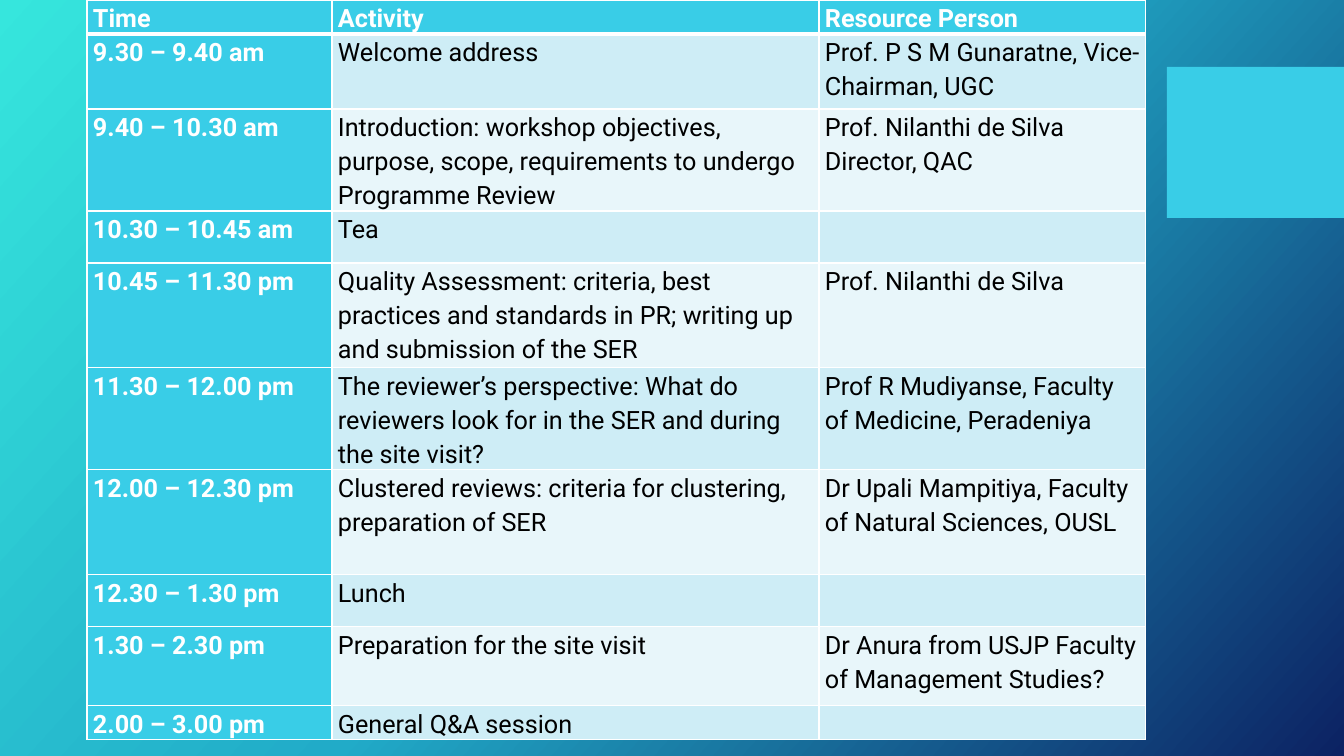
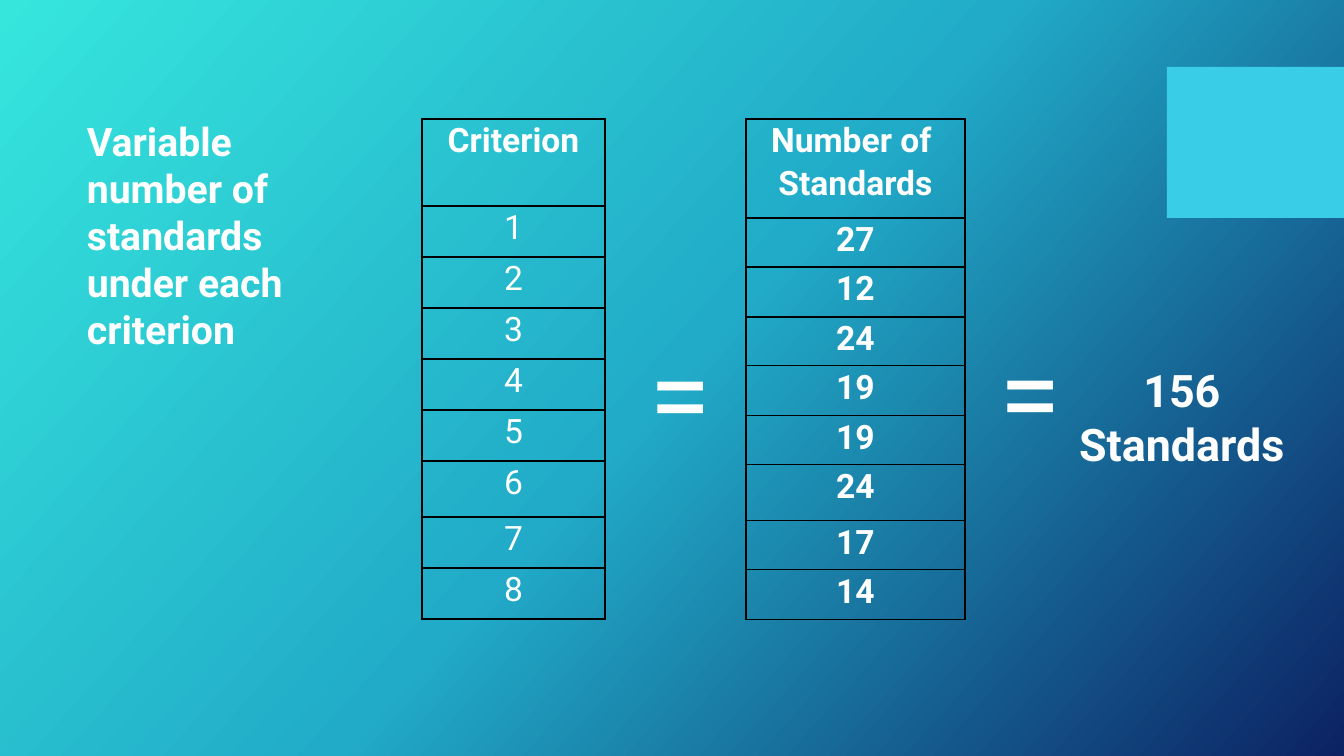
from copy import deepcopy
from dataclasses import dataclass

from lxml import etree
from pptx import Presentation
from pptx.dml.color import RGBColor
from pptx.enum import shapes, text
from pptx.oxml import ns
from pptx.slide import Slide
from pptx.table import _Cell
from pptx.text.text import TextFrame
from pptx.util import Emu, Pt

SLIDE_WIDTH, SLIDE_HEIGHT = 1344, 756
EMU_PER_PX = 12192000 / SLIDE_WIDTH


@dataclass(frozen=True)
class Theme:
    font: str = "Roboto"
    white: str = "FFFFFF"
    black: str = "000000"
    accent: str = "39CDE7"
    band_dark: str = "CEEDF6"
    band_light: str = "E8F6FA"
    gradient: tuple[tuple[float, str], ...] = ((0, "36E6DD"), (0.5, "21ABC8"), (1, "0C2263"))
    gradient_angle: int = 42
    schedule_size: int = 18
    count_size: int = 24
    title_size: int = 28
    total_size: int = 32
    equals_size: int = 80


THEME = Theme()


@dataclass(frozen=True)
class Box:
    left: int
    top: int
    width: int
    height: int

    def emu(self) -> tuple[Emu, ...]:
        return tuple(px(value) for value in (self.left, self.top, self.width, self.height))


@dataclass(frozen=True)
class TextStyle:
    size: int
    color: str = THEME.white
    bold: bool = True
    align: text.PP_ALIGN = text.PP_ALIGN.LEFT
    line_spacing: float = 1.0


@dataclass(frozen=True)
class Label:
    content: str
    box: Box
    style: TextStyle


@dataclass(frozen=True)
class CellStyle:
    text: TextStyle
    fill: str | None
    border: str
    margin: int
    top_width: int = 1
    bottom_width: int = 1


@dataclass(frozen=True)
class CountColumn:
    heading: str
    values: tuple[int, ...]
    left: int
    width: int
    row_heights: tuple[int, ...]
    bold_values: bool


SCHEDULE = (
    ("Time", "Activity", "Resource Person"),
    ("9.30 – 9.40 am", "Welcome address", "Prof. P S M Gunaratne, Vice-Chairman, UGC"),
    ("9.40 – 10.30 am",
     "Introduction: workshop objectives, purpose, scope, requirements to undergo Programme Review",
     "Prof. Nilanthi de Silva Director, QAC"),
    ("10.30 – 10.45 am", "Tea", ""),
    ("10.45 – 11.30 pm",
     "Quality Assessment: criteria, best practices and standards in PR; "
     "writing up and submission of the SER",
     "Prof. Nilanthi de Silva"),
    ("11.30 – 12.00 pm",
     "The reviewer’s perspective: What do reviewers look for in the SER and during the site visit?",
     "Prof R Mudiyanse, Faculty of Medicine, Peradeniya"),
    ("12.00 – 12.30 pm", "Clustered reviews: criteria for clustering, preparation of SER",
     "Dr Upali Mampitiya, Faculty of Natural Sciences, OUSL"),
    ("12.30 – 1.30 pm", "Lunch", ""),
    ("1.30 – 2.30 pm", "Preparation for the site visit",
     "Dr Anura from USJP Faculty of Management Studies?"),
    ("2.00 – 3.00 pm", "General Q&A session", ""),
)
SCHEDULE_COLUMNS = (245, 487, 327)
SCHEDULE_ROWS = (34, 75, 101, 52, 105, 102, 105, 52, 79, 34)

COUNT_COLUMNS = (
    CountColumn("Number of \nStandards", (27, 12, 24, 19, 19, 24, 17, 14), 746, 219,
                (99, 49, 50, 49, 50, 49, 56, 49, 50), True),
    CountColumn("Criterion", tuple(range(1, 9)), 422, 183,
                (87, 51, 51, 51, 51, 51, 56, 51, 51), False),
)

EQUALS_STYLE = TextStyle(THEME.equals_size, bold=False)
LABELS = (
    Label("Variable number of standards under each criterion", Box(77, 112, 286, 248),
          TextStyle(THEME.title_size)),
    Label("=", Box(640, 319, 91, 146), EQUALS_STYLE),
    Label("=", Box(990, 318, 91, 146), EQUALS_STYLE),
    Label("156\nStandards", Box(1064, 358, 236, 173),
          TextStyle(THEME.total_size, align=text.PP_ALIGN.CENTER)),
)


def px(value: int) -> Emu:
    return Emu(round(value * EMU_PER_PX))


def rgb(value: str) -> RGBColor:
    return RGBColor.from_string(value)


def write_text(frame: TextFrame, content: str, style: TextStyle) -> None:
    frame.text = content
    for paragraph in frame.paragraphs:
        paragraph.alignment = style.align
        paragraph.line_spacing = style.line_spacing
        paragraph.font.size = Pt(style.size)
        for run in paragraph.runs:
            run.font.name = THEME.font
            run.font.size = Pt(style.size)
            run.font.bold = style.bold
            run.font.color.rgb = rgb(style.color)


def draw_label(slide: Slide, label: Label) -> None:
    frame = slide.shapes.add_textbox(*label.box.emu()).text_frame
    frame.word_wrap = True
    write_text(frame, label.content, label.style)


def set_borders(cell: _Cell, style: CellStyle) -> None:
    properties = cell._tc.get_or_add_tcPr()
    widths = {"lnL": 1, "lnR": 1, "lnT": style.top_width, "lnB": style.bottom_width}
    for position, (side, width) in enumerate(widths.items()):
        line = etree.Element(ns.qn(f"a:{side}"), w=str(Pt(width)))
        solid = etree.SubElement(line, ns.qn("a:solidFill"))
        etree.SubElement(solid, ns.qn("a:srgbClr"), val=style.border)
        properties.insert(position, line)


def fill_cell(cell: _Cell, content: str, style: CellStyle) -> None:
    cell.margin_left = cell.margin_right = px(style.margin)
    cell.margin_top = cell.margin_bottom = 0
    if style.fill:
        cell.fill.solid()
        cell.fill.fore_color.rgb = rgb(style.fill)
    else:
        cell.fill.background()
    set_borders(cell, style)
    write_text(cell.text_frame, content, style.text)


def add_plain_table(slide: Slide, left: int, top: int, columns: tuple[int, ...],
                    rows: tuple[int, ...]):
    box = Box(left, top, sum(columns), sum(rows))
    table = slide.shapes.add_table(len(rows), len(columns), *box.emu()).table
    table.first_row = table.horz_banding = False
    for column, width in zip(table.columns, columns):
        column.width = px(width)
    for row, height in zip(table.rows, rows):
        row.height = px(height)
    return table


def schedule_style(row: int, column: int) -> CellStyle:
    heading = row == 0 or column == 0
    band = THEME.band_dark if row % 2 else THEME.band_light
    return CellStyle(
        text=TextStyle(THEME.schedule_size, THEME.white if heading else THEME.black,
                       heading, line_spacing=1.15),
        fill=THEME.accent if heading else band,
        border=THEME.white,
        margin=6,
        top_width=3 if row == 1 else 1,
        bottom_width=3 if row == 0 else 1,
    )


def draw_schedule(slide: Slide) -> None:
    table = add_plain_table(slide, 87, 0, SCHEDULE_COLUMNS, SCHEDULE_ROWS)
    for row, entries in enumerate(SCHEDULE):
        for column, content in enumerate(entries):
            fill_cell(table.cell(row, column), content, schedule_style(row, column))


def draw_count_column(slide: Slide, counts: CountColumn) -> None:
    table = add_plain_table(slide, counts.left, 119, (counts.width,), counts.row_heights)
    for row, content in enumerate((counts.heading, *map(str, counts.values))):
        style = TextStyle(THEME.count_size, bold=row == 0 or counts.bold_values,
                          align=text.PP_ALIGN.CENTER, line_spacing=1.07)
        fill_cell(table.cell(row, 0), content, CellStyle(style, None, THEME.black, 7))


def add_themed_slide(presentation) -> Slide:
    slide = presentation.slides.add_slide(presentation.slide_layouts[6])
    fill = slide.background.fill
    fill.gradient()
    fill.gradient_angle = 360 - THEME.gradient_angle
    stop_list = slide.element.find(f".//{ns.qn('a:gsLst')}")
    stop_list.append(deepcopy(stop_list[-1]))
    for stop, (position, color) in zip(fill.gradient_stops, THEME.gradient):
        stop.position = position
        stop.color.rgb = rgb(color)
    block = slide.shapes.add_shape(shapes.MSO_SHAPE.RECTANGLE, *Box(1167, 67, 177, 151).emu())
    block.shadow.inherit = False
    block.fill.solid()
    block.fill.fore_color.rgb = rgb(THEME.accent)
    block.line.fill.background()
    return slide


def main() -> None:
    presentation = Presentation()
    presentation.slide_width = px(SLIDE_WIDTH)
    presentation.slide_height = px(SLIDE_HEIGHT)

    draw_schedule(add_themed_slide(presentation))

    standards_slide = add_themed_slide(presentation)
    for counts in COUNT_COLUMNS:
        draw_count_column(standards_slide, counts)
    for label in LABELS:
        draw_label(standards_slide, label)

    presentation.save("out.pptx")


if __name__ == "__main__":
    main()
